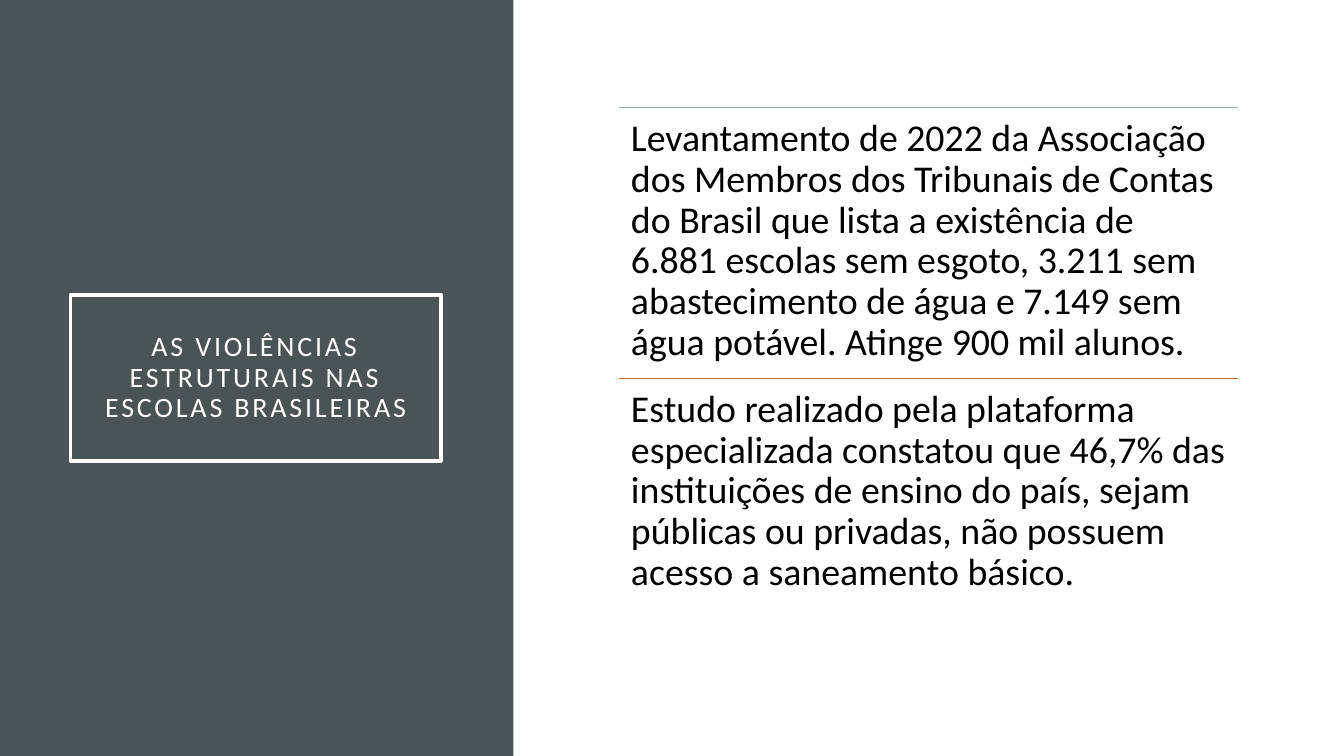
import collections
import dataclasses

import lxml.etree
import pptx
import pptx.dml.color
import pptx.enum.shapes
import pptx.enum.text
import pptx.oxml.ns
import pptx.util

EMU_PER_PX = 9525
Box = collections.namedtuple("Box", "left top width height")


@dataclasses.dataclass(frozen=True)
class Theme:
    font: str = "Calibri"
    panel: str = "4A5356"
    light: str = "FFFFFF"
    text: str = "000000"
    rules: tuple = ("9BAFB5", "C96731")
    title_size: int = 20
    body_size: int = 27
    frame_width: float = 2.5
    rule_width: float = 0.5


THEME = Theme()
SLIDE = Box(0, 0, 1280, 720)
TITLE = "AS VIOLÊNCIAS ESTRUTURAIS NAS ESCOLAS BRASILEIRAS"
FINDINGS = (
    "Levantamento de 2022 da Associação dos Membros dos Tribunais de Contas "
    "do Brasil que lista a existência de 6.881 escolas sem esgoto, 3.211 sem "
    "abastecimento de água e 7.149 sem água potável. Atinge 900 mil alunos.",
    "Estudo realizado pela plataforma especializada constatou que 46,7% das "
    "instituições de ensino do país, sejam públicas ou privadas, não possuem "
    "acesso a saneamento básico.",
)


def px(length):
    return pptx.util.Emu(round(length * EMU_PER_PX))


def emu(box):
    return [px(length) for length in box]


def rgb(value):
    return pptx.dml.color.RGBColor.from_string(value)


def write(shape, text, size, color, inset, anchor, alignment):
    """Fill a shape with one formatted paragraph and return its run."""
    frame = shape.text_frame
    frame.word_wrap = True
    frame.auto_size = pptx.enum.text.MSO_AUTO_SIZE.NONE
    frame.vertical_anchor = anchor
    frame.margin_left = frame.margin_right = px(inset)
    frame.margin_top = frame.margin_bottom = px(inset)
    paragraph = frame.paragraphs[0]
    paragraph.alignment = alignment
    paragraph.line_spacing = 0.9
    run = paragraph.add_run()
    run.text = text
    run.font.name = THEME.font
    run.font.size = pptx.util.Pt(size)
    run.font.color.rgb = rgb(color)
    return run


def add_title_panel(slide, box):
    panel = slide.shapes.add_shape(
        pptx.enum.shapes.MSO_SHAPE.RECTANGLE, *emu(box))
    panel.shadow.inherit = False
    panel.fill.solid()
    panel.fill.fore_color.rgb = rgb(THEME.panel)
    panel.line.fill.background()

    title = slide.shapes.title
    title.element.addprevious(panel.element)  # the panel lies behind the title
    title.left, title.top, title.width, title.height = emu(
        Box(box.left + 67, box.top + 281, box.width - 136, 158))
    title.line.color.rgb = rgb(THEME.light)
    title.line.width = pptx.util.Pt(THEME.frame_width)
    run = write(title, TITLE, THEME.title_size, THEME.light, 19,
                pptx.enum.text.MSO_ANCHOR.MIDDLE,
                pptx.enum.text.PP_ALIGN.CENTER)
    run.font._element.set("spc", "200")


def add_rule(slide, left, top, width, color):
    rule = slide.shapes.add_connector(
        pptx.enum.shapes.MSO_CONNECTOR.STRAIGHT,
        px(left), px(top), px(left + width), px(top))
    rule.line.color.rgb = rgb(color)
    rule.line.width = pptx.util.Pt(THEME.rule_width)
    lxml.etree.SubElement(rule.element.spPr,
                          pptx.oxml.ns.qn("a:effectLst"))


def add_findings(slide, box):
    """Stack the findings in equal rows, each under a coloured rule."""
    row_height = box.height / len(FINDINGS)
    for index, (finding, color) in enumerate(zip(FINDINGS, THEME.rules)):
        top = box.top + index * row_height
        add_rule(slide, box.left, top, box.width, color)
        row = slide.shapes.add_textbox(
            *emu(Box(box.left, top, box.width, row_height)))
        write(row, finding, THEME.body_size, THEME.text, 11,
              pptx.enum.text.MSO_ANCHOR.TOP, pptx.enum.text.PP_ALIGN.LEFT)


def main():
    presentation = pptx.Presentation()
    presentation.slide_width = px(SLIDE.width)
    presentation.slide_height = px(SLIDE.height)
    title_only = presentation.slide_layouts.get_by_name("Title Only")
    slide = presentation.slides.add_slide(title_only)
    slide.background.fill.solid()
    slide.background.fill.fore_color.rgb = rgb(THEME.light)
    add_title_panel(slide, Box(0, 0, 489, SLIDE.height))
    add_findings(slide, Box(590, 102, 589, 516))
    presentation.save("out.pptx")


if __name__ == "__main__":
    main()
